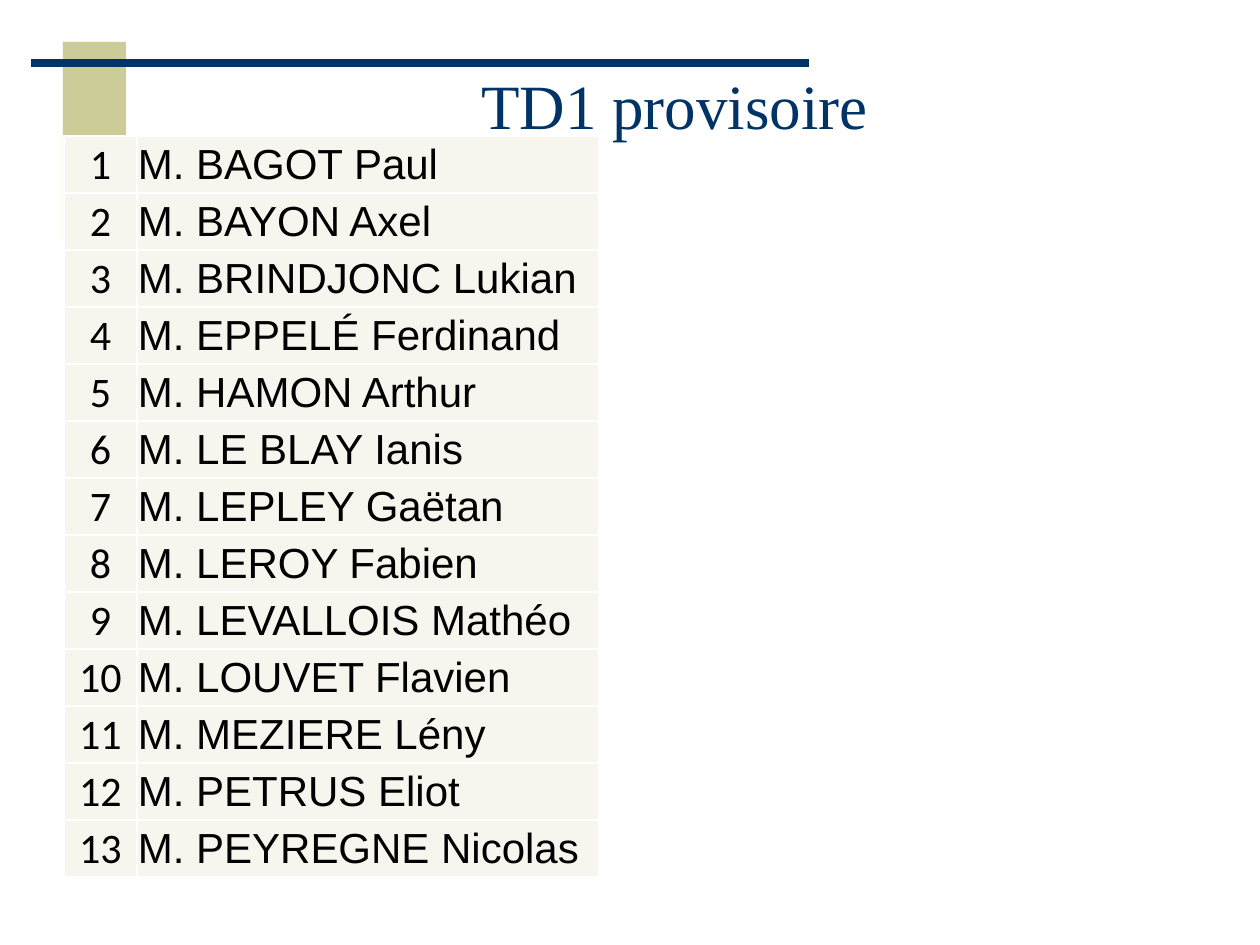
from dataclasses import dataclass

from lxml.etree import SubElement
from pptx import Presentation
from pptx.dml.color import RGBColor
from pptx.enum.shapes import MSO_CONNECTOR, MSO_SHAPE
from pptx.enum.text import MSO_ANCHOR, PP_ALIGN
from pptx.oxml.ns import qn
from pptx.util import Pt


@dataclass(frozen=True)
class Theme:
    navy: str = "003366"
    sand: str = "CCCC99"
    cell: str = "F6F6EF"
    border: str = "FFFFFF"
    ink: str = "000000"
    title_size: int = 36
    list_size: int = 24
    title_font: str = "Times New Roman"
    number_font: str = "Calibri"
    name_font: str = "Arial"


THEME = Theme()
EMU_PER_PX = 914400 / 126

STUDENTS = [
    "M. BAGOT Paul",
    "M. BAYON Axel",
    "M. BRINDJONC Lukian",
    "M. EPPELÉ Ferdinand",
    "M. HAMON Arthur",
    "M. LE BLAY Ianis",
    "M. LEPLEY Gaëtan",
    "M. LEROY Fabien",
    "M. LEVALLOIS Mathéo",
    "M. LOUVET Flavien",
    "M. MEZIERE Lény",
    "M. PETRUS Eliot",
    "M. PEYREGNE Nicolas",
]


def px(length):
    return round(length * EMU_PER_PX)


def write_text(frame, text, *, font, size, color, align=PP_ALIGN.LEFT, spacing=None):
    paragraph = frame.paragraphs[0]
    paragraph.alignment = align
    paragraph.line_spacing = spacing
    run = paragraph.add_run()
    run.text = text
    run.font.name = font
    run.font.size = Pt(size)
    run.font.color.rgb = RGBColor.from_string(color)


def add_block(slide, left, top, width, height, color):
    block = slide.shapes.add_shape(
        MSO_SHAPE.RECTANGLE, px(left), px(top), px(width), px(height))
    block.shadow.inherit = False
    block.fill.solid()
    block.fill.fore_color.rgb = RGBColor.from_string(color)
    block.line.fill.background()


def add_rule(slide, left, right, y, color, weight):
    rule = slide.shapes.add_connector(
        MSO_CONNECTOR.STRAIGHT, px(left), px(y), px(right), px(y))
    rule.line.color.rgb = RGBColor.from_string(color)
    rule.line.width = Pt(weight)
    SubElement(rule._element.spPr, qn("a:effectLst"))


def add_title(slide, text, left, top, width, height):
    frame = slide.shapes.add_textbox(
        px(left), px(top), px(width), px(height)).text_frame
    frame.word_wrap = True
    frame.vertical_anchor = MSO_ANCHOR.MIDDLE
    write_text(frame, text, font=THEME.title_font, size=THEME.title_size,
               color=THEME.navy, align=PP_ALIGN.CENTER, spacing=0.85)


def style_cell(cell):
    cell.vertical_anchor = MSO_ANCHOR.MIDDLE
    cell.margin_left = cell.margin_right = cell.margin_top = px(1)
    cell.margin_bottom = 0
    # Borders come before the fill in the cell properties
    properties = cell._tc.get_or_add_tcPr()
    for side in ("lnL", "lnR", "lnT", "lnB"):
        border = SubElement(properties, qn(f"a:{side}"), w=str(Pt(1)))
        paint = SubElement(border, qn("a:solidFill"))
        SubElement(paint, qn("a:srgbClr"), val=THEME.border)
    cell.fill.solid()
    cell.fill.fore_color.rgb = RGBColor.from_string(THEME.cell)


def add_roster(slide, students, left, top, column_widths, row_height):
    roster = slide.shapes.add_table(
        len(students), len(column_widths), px(left), px(top),
        px(sum(column_widths)), px(row_height * len(students))).table
    for column, width in zip(roster.columns, column_widths):
        column.width = px(width)
    for index, student in enumerate(students):
        roster.rows[index].height = px(row_height)
        entries = (
            (str(index + 1), THEME.number_font, PP_ALIGN.CENTER),
            (student, THEME.name_font, PP_ALIGN.LEFT),
        )
        for cell, (text, font, align) in zip(roster.rows[index].cells, entries):
            style_cell(cell)
            write_text(cell.text_frame, text, font=font, size=THEME.list_size,
                       color=THEME.ink, align=align)


def main():
    deck = Presentation()
    deck.slide_width, deck.slide_height = px(1260), px(945)
    slide = deck.slides.add_slide(deck.slide_layouts[6])

    # Decoration
    add_block(slide, 63, 42, 63, 199, THEME.sand)
    add_rule(slide, 31, 809, 63, THEME.navy, 4.5)

    # Heading and student list
    add_title(slide, "TD1 provisoire", 134, 84, 1081, 52)
    add_roster(slide, STUDENTS, 64, 136, (73, 462), 57)

    deck.save("out.pptx")


if __name__ == "__main__":
    main()
